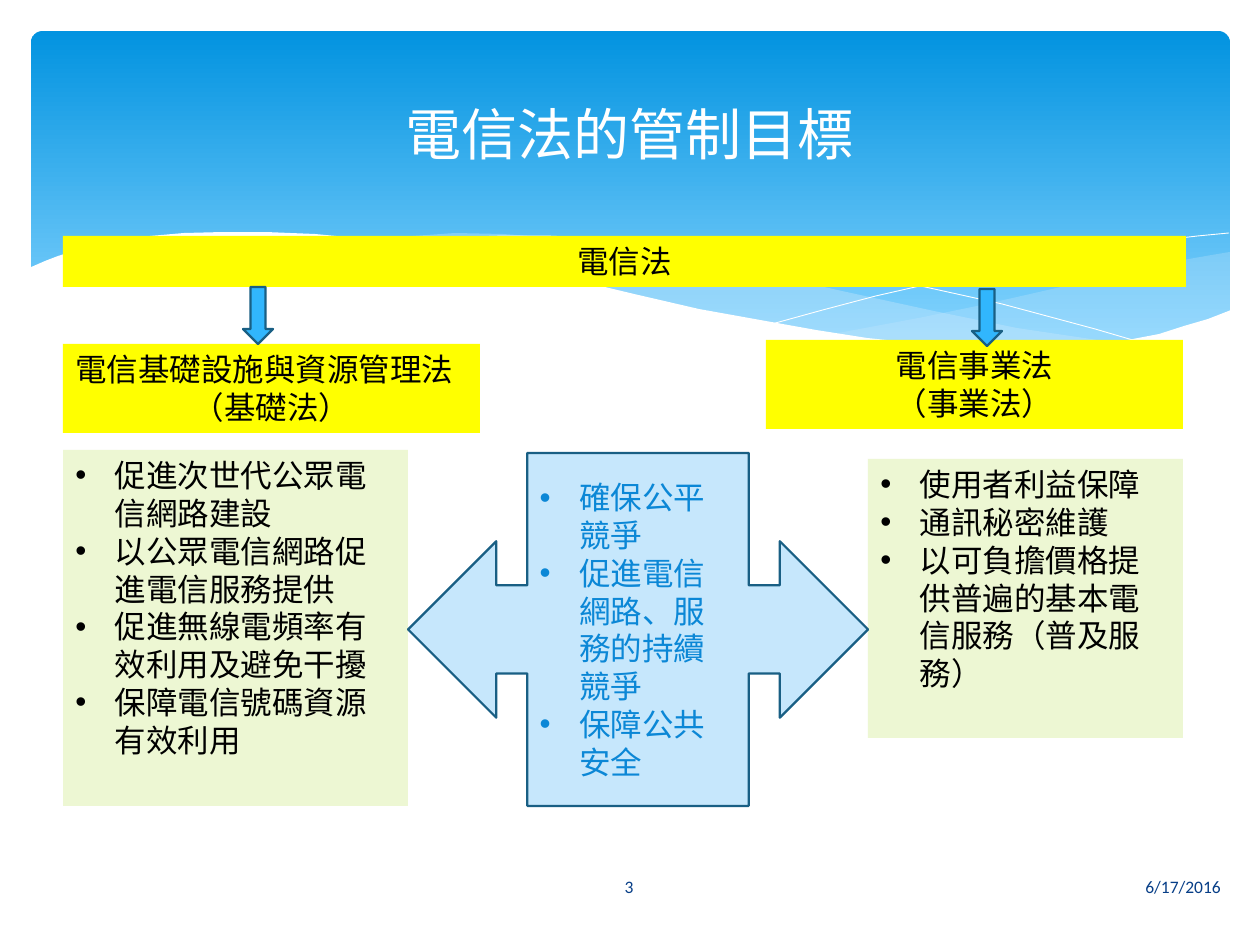
from lxml import etree
from pptx import Presentation
from pptx.dml.color import RGBColor
from pptx.enum.shapes import MSO_SHAPE
from pptx.enum.text import MSO_ANCHOR, PP_ALIGN
from pptx.oxml.ns import qn
from pptx.util import Pt

PX = 7257.14  # EMU in one px, 126 px to the inch
LEFT, CENTER, RIGHT = PP_ALIGN.LEFT, PP_ALIGN.CENTER, PP_ALIGN.RIGHT
TOP, MIDDLE = MSO_ANCHOR.TOP, MSO_ANCHOR.MIDDLE
ROUNDED, RECTANGLE = MSO_SHAPE.ROUNDED_RECTANGLE, MSO_SHAPE.RECTANGLE
DOWN_ARROW = MSO_SHAPE.DOWN_ARROW
CALLOUT = MSO_SHAPE.LEFT_RIGHT_ARROW_CALLOUT
WHITE, BLACK, YELLOW, NAVY = "FFFFFF", "000000", "FFFF00", "073E87"
PALE_GREEN, PALE_BLUE, BLUE, OUTLINE = "EDF7D3", "C6E7FC", "31B6FD", "195F84"


def paint(shape, fill=None, line=None, width=1.25):
    shape.shadow.inherit = False
    for target, color in ((shape.fill, fill), (shape.line.fill, line)):
        if color:
            target.solid()
            target.fore_color.rgb = RGBColor.from_string(color)
        else:
            target.background()
    if line:
        shape.line.width = Pt(width)


def write(shape, lines, size, color, align=CENTER, anchor=TOP, bullets=False):
    text_frame = shape.text_frame
    text_frame.word_wrap = True
    text_frame.vertical_anchor = anchor
    text_frame.text = "\n".join(lines)
    for paragraph in text_frame.paragraphs:
        paragraph.alignment = align
        font = paragraph.runs[0].font
        font.name, font.size = "Calibri", Pt(size)
        font.color.rgb = RGBColor.from_string(color)
        if bullets:
            properties = paragraph._p.get_or_add_pPr()
            properties.set("marL", "285750")
            properties.set("indent", "-285750")
            etree.SubElement(properties, qn("a:buFont")).set("typeface", "Arial")
            etree.SubElement(properties, qn("a:buChar")).set("char", "•")


presentation = Presentation()
presentation.slide_width = round(1260 * PX)
presentation.slide_height = round(945 * PX)
slide = presentation.slides.add_slide(presentation.slide_layouts[6])
shapes = slide.shapes

# Gradient banner
banner = shapes.add_shape(ROUNDED, *[round(v * PX) for v in (31, 31, 1199, 340)])
banner.adjustments[0] = 0.034
paint(banner)
banner.fill.gradient()
banner.fill.gradient_angle = 270
for stop, position, color in zip(banner.fill.gradient_stops, (0, 0.9), ("0293E0", "83D3FE")):
    stop.position = position
    stop.color.rgb = RGBColor.from_string(color)

# Waves: points, closed, fill, line, opacity in percent
right_wave = [
    (1230, 252), (1212, 255), (1178, 261), (1142, 268), (1104, 277), (1048, 290),
    (982, 305), (919, 318), (833, 334), (871, 339), (906, 343), (954, 348),
    (998, 349), (1026, 350), (1063, 349), (1099, 346), (1130, 340), (1160, 334),
    (1187, 326), (1213, 318), (1230, 311)]
middle_wave = [
    (1125, 344), (1091, 339), (1017, 328), (934, 311), (842, 291), (793, 280),
    (753, 270), (717, 262), (682, 256), (648, 249), (616, 244), (557, 238),
    (503, 234), (455, 233), (413, 236), (377, 238), (360, 241), (407, 247),
    (456, 256), (509, 266), (566, 280), (619, 292), (713, 312), (757, 321),
    (799, 329), (838, 335), (876, 340), (910, 345), (942, 348), (974, 349),
    (1017, 350), (1056, 350), (1092, 348)]
falling_curve = [
    (389, 246), (413, 242), (445, 238), (471, 237), (505, 236), (546, 236),
    (591, 238), (643, 242), (701, 248), (766, 257), (838, 268), (916, 285),
    (1002, 304), (1095, 329), (1143, 343)]
rising_curve = [
    (772, 324), (823, 310), (876, 296), (942, 281), (1016, 265), (1091, 251),
    (1146, 242), (1198, 236), (1229, 233)]
front_wave = [
    (1231, 310), (1208, 319), (1184, 326), (1159, 334), (1133, 339), (1103, 344),
    (1071, 347), (1037, 349), (999, 348), (959, 347), (915, 343), (867, 338),
    (816, 330), (760, 320), (699, 309), (634, 294), (563, 277), (493, 261),
    (428, 248), (368, 239), (315, 234), (266, 232), (223, 232), (184, 233),
    (150, 236), (120, 241), (96, 246), (74, 251), (58, 256), (45, 261),
    (29, 268), (29, 415), (1231, 415)]
for points, closed, fill, line, opacity in (
        (right_wave, True, PALE_BLUE, None, 29),
        (middle_wave, True, PALE_BLUE, None, 40),
        (falling_curve, False, None, WHITE, 100),
        (rising_curve, False, None, WHITE, 100),
        (front_wave, True, WHITE, None, 100)):
    builder = shapes.build_freeform(*points[0], scale=PX)
    builder.add_line_segments(points[1:], close=closed)
    wave = builder.convert_to_shape()
    paint(wave, fill, line, 0.5)
    if opacity < 100:
        color_element = wave._element.spPr.find(qn("a:solidFill"))[0]
        etree.SubElement(color_element, qn("a:alpha")).set("val", str(opacity * 1000))

# Date, page number and title
for box, line, size, color, align in (
        ((712, 862, 521, 50), "6/17/2016", 10, NAVY, RIGHT),
        ((549, 862, 160, 50), "3", 10, NAVY, CENTER),
        ((63, 47, 1134, 173), "電信法的管制目標", 32, WHITE, CENTER)):
    label = shapes.add_textbox(*[round(v * PX) for v in box])
    write(label, [line], size, color, align, MIDDLE)

# Yellow law headings
for box, lines in (
        ((63, 236, 1123, 51), ["電信法"]),
        ((63, 344, 417, 89), ["電信基礎設施與資源管理法", "（基礎法）"]),
        ((766, 340, 417, 89), ["電信事業法", "（事業法）"])):
    heading = shapes.add_shape(RECTANGLE, *[round(v * PX) for v in box])
    paint(heading, YELLOW)
    write(heading, lines, 18, BLACK)
    if lines[-1] == "（基礎法）":
        heading.text_frame.paragraphs[0].alignment = LEFT

# Arrows from the main law to its two parts
for left, top in ((243, 287), (972, 289)):
    arrow = shapes.add_shape(DOWN_ARROW, *[round(v * PX) for v in (left, top, 30, 57)])
    paint(arrow, BLUE, OUTLINE)

# Goals of each law, with the shared goals between them
for kind, box, fill, line, color, anchor, goals in (
        (RECTANGLE, (63, 450, 345, 356), PALE_GREEN, None, BLACK, TOP,
         ["促進次世代公眾電信網路建設", "以公眾電信網路促進電信服務提供",
          "促進無線電頻率有效利用及避免干擾", "保障電信號碼資源有效利用"]),
        (RECTANGLE, (868, 459, 315, 279), PALE_GREEN, None, BLACK, TOP,
         ["使用者利益保障", "通訊秘密維護",
          "以可負擔價格提供普遍的基本電信服務（普及服務）"]),
        (CALLOUT, (408, 453, 460, 353), PALE_BLUE, OUTLINE, "0B87D6", MIDDLE,
         ["確保公平競爭", "促進電信網路、服務的持續競爭", "保障公共安全"])):
    panel = shapes.add_shape(kind, *[round(v * PX) for v in box])
    paint(panel, fill, line)
    write(panel, goals, 18, color, LEFT, anchor, bullets=True)

presentation.save("out.pptx")
